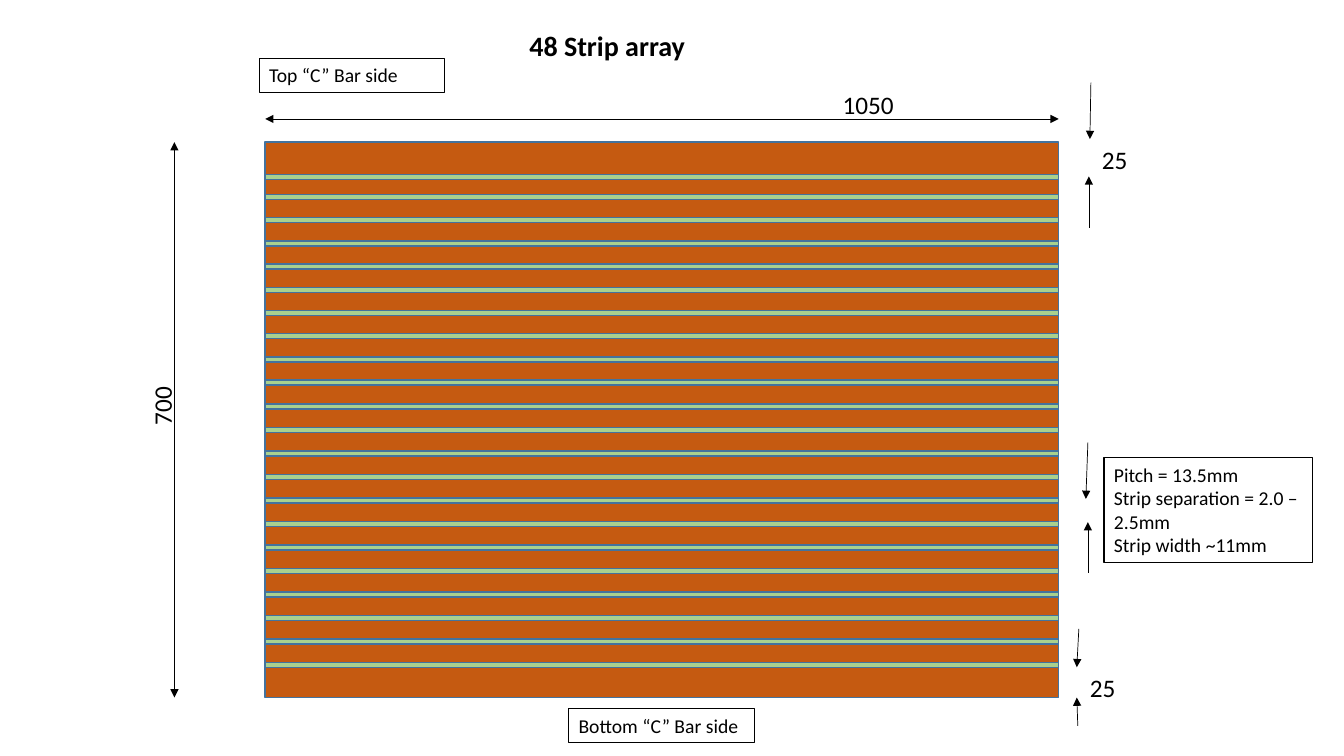
from pptx import Presentation
from pptx.dml.color import RGBColor
from pptx.enum import shapes, text
from pptx.oxml.ns import qn
from pptx.util import Inches, Pt
from lxml import etree

COLORS = {"ink": "000000", "strip": "C55A11", "gap": "A9D18E", "edge": "43739E"}
LEFT, TOP, WIDTH, HEIGHT = 2.63, 1.41, 7.87, 5.51
RIGHT, BOTTOM = LEFT + WIDTH, TOP + HEIGHT


def rgb(name):
    return RGBColor.from_string(COLORS[name])


def place(sp, x, y, w, h):
    sp.left, sp.top, sp.width, sp.height = map(Inches, (x, y, w, h))


def write(sp, *lines, size=18, bold=False):
    tf = sp.text_frame
    tf.word_wrap = True
    tf.auto_size = text.MSO_AUTO_SIZE.NONE
    tf.vertical_anchor = text.MSO_ANCHOR.TOP
    for i, line in enumerate(lines):
        p = tf.add_paragraph() if i else tf.paragraphs[0]
        p.alignment = text.PP_ALIGN.LEFT
        r = p.add_run()
        r.text = line
        r.font.name, r.font.size, r.font.bold = "Calibri", Pt(size), bold
        r.font.color.rgb = rgb("ink")


def add_label(s, x, y, w, h, *lines, size=18, border=False, rotation=0):
    sp = s.shapes.add_textbox(*map(Inches, (x, y, w, h)))
    sp.rotation = rotation
    if border:
        sp.line.color.rgb = rgb("ink")
        sp.line.width = Pt(0.75)
    write(sp, *lines, size=size)


def add_bar(s, y, h, fill):
    sp = s.shapes.add_shape(shapes.MSO_SHAPE.RECTANGLE,
                            *map(Inches, (LEFT, y, WIDTH, h)))
    sp.shadow.inherit = False
    sp.fill.solid()
    sp.fill.fore_color.rgb = rgb(fill)
    sp.line.color.rgb = rgb("edge")
    sp.line.width = Pt(1)


def add_arrow(s, x1, y1, x2, y2, both=False):
    c = s.shapes.add_connector(shapes.MSO_CONNECTOR.STRAIGHT,
                               *map(Inches, (x1, y1, x2, y2)))
    c.line.color.rgb = rgb("ink")
    c.line.width = Pt(0.5)
    ln = c.line._get_or_add_ln()
    for tag in ("a:headEnd", "a:tailEnd") if both else ("a:tailEnd",):
        etree.SubElement(ln, qn(tag), type="triangle")
    etree.SubElement(c._element.spPr, qn("a:effectLst"))


def main():
    prs = Presentation()
    prs.slide_width, prs.slide_height = Inches(13.33), Inches(7.5)
    s = prs.slides.add_slide(prs.slide_layouts[5])

    # Title
    place(s.shapes.title, 5.15, 0.23, 3.11, 0.44)
    write(s.shapes.title, "48 Strip array", size=20, bold=True)

    # Strip panel: edge gap, then an upper and a lower run of even gaps
    add_bar(s, TOP, HEIGHT, "strip")
    upper = [1.93 + 0.23 * i for i in range(9)]
    lower = [4.01 + (6.57 - 4.01) / 11 * i for i in range(12)]
    for y in [1.73] + upper + lower:
        add_bar(s, y, 0.05, "gap")

    # Overall dimensions
    add_arrow(s, 1.73, TOP, 1.73, BOTTOM, both=True)
    add_label(s, 1.31, 3.82, 0.59, 0.4, "700", rotation=270)
    add_arrow(s, LEFT, 1.18, RIGHT, 1.18, both=True)
    add_label(s, 8.26, 0.84, 0.89, 0.4, "1050")

    # Edge strip widths and pitch, each between two facing arrows
    for arrow in ((10.82, 0.82, 10.81, 1.38), (10.8, 2.26, 10.8, 1.75),
                  (10.79, 4.39, 10.77, 4.95), (10.79, 5.68, 10.79, 5.18),
                  (10.7, 6.24, 10.68, 6.62), (10.69, 7.2, 10.68, 6.92)):
        add_arrow(s, *arrow)
    for x, y in ((10.83, 1.38), (10.71, 6.62)):
        add_label(s, x, y, 0.49, 0.4, "25")

    # Boxed notes
    add_label(s, 10.95, 4.54, 2.07, 1.04, "Pitch = 13.5mm",
              "Strip separation = 2.0 – 2.5mm", "Strip width ~11mm",
              size=14, border=True)
    add_label(s, 2.57, 0.58, 1.84, 0.34, "Top “C” Bar side", size=14, border=True)
    add_label(s, 5.64, 7.03, 1.84, 0.34, "Bottom “C” Bar side", size=14, border=True)

    prs.save("out.pptx")


if __name__ == "__main__":
    main()
